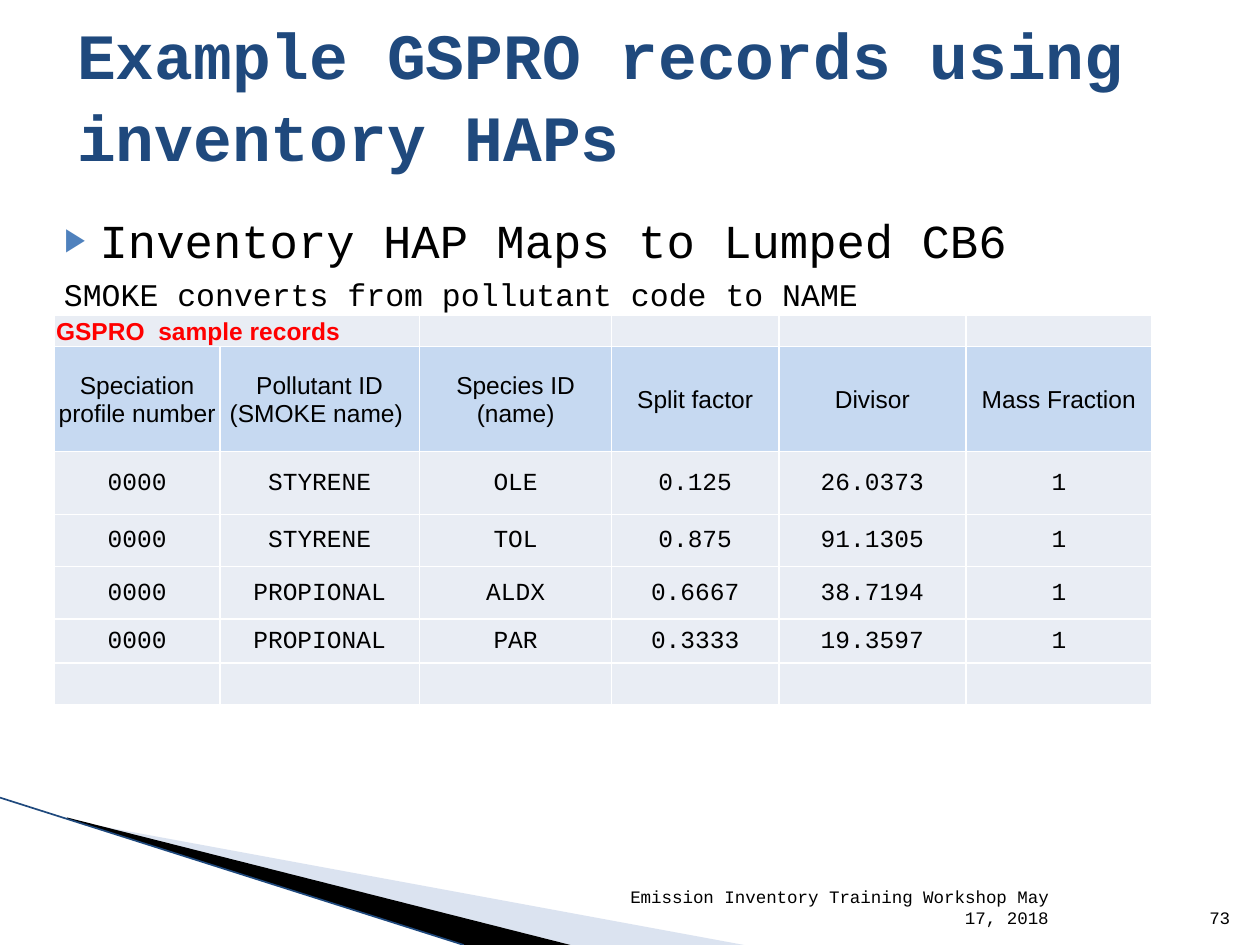
from dataclasses import dataclass

import lxml.etree
import pptx
import pptx.dml.color
import pptx.enum.shapes
import pptx.enum.text
import pptx.oxml.ns
import pptx.util

Cm = pptx.util.Cm
Pt = pptx.util.Pt
qn = pptx.oxml.ns.qn
ALIGN = pptx.enum.text.PP_ALIGN
ANCHOR = pptx.enum.text.MSO_ANCHOR


@dataclass(frozen=True)
class Theme:
    mono: str = "Courier New"
    sans: str = "Arial"
    navy: str = "1F497D"
    black: str = "000000"
    red: str = "FF0000"
    white: str = "FFFFFF"
    bullet: str = "4F81BD"
    wedge: str = "A7B9DB"
    header: str = "C6D9F1"
    row: str = "E9EDF4"
    title_size: float = 36.9
    body_size: int = 27
    note_size: int = 18
    table_size: int = 14
    footer_size: int = 10


THEME = Theme()
COLUMNS = [3.33, 4.03, 3.87, 3.37, 3.77, 3.75]
ROWS = [0.58, 2.12, 1.27, 1.05, 1.05, 0.89, 0.84]
HEADINGS = ["Speciation profile number", "Pollutant ID (SMOKE name) ", "Species ID (name)",
            "Split factor", "Divisor", "Mass Fraction"]
RECORDS = [
    ["0000", "STYRENE", "OLE", "0.125", "26.0373", "1"],
    ["0000", "STYRENE", "TOL", "0.875", "91.1305", "1"],
    ["0000", "PROPIONAL", "ALDX", "0.6667", "38.7194", "1"],
    ["0000", "PROPIONAL", "PAR", "0.3333", "19.3597", "1"],
]


def rgb(color):
    return pptx.dml.color.RGBColor.from_string(color)


def add_xml(parent, tag, **attrs):
    return lxml.etree.SubElement(parent, qn(tag), attrs)


def format_runs(p, size, color=THEME.black, font=THEME.mono, bold=False):
    for r in p.runs:
        r.font.size = Pt(size)
        r.font.name = font
        r.font.bold = bold
        r.font.color.rgb = rgb(color)


def place(sp, left, top, width, height):
    sp.left, sp.top, sp.width, sp.height = Cm(left), Cm(top), Cm(width), Cm(height)


def add_wedge(s, points, color, alpha=None):
    start, *rest = [(Cm(x), Cm(y)) for x, y in points]
    builder = s.shapes.build_freeform(*start, scale=1.0)
    builder.add_line_segments(rest, close=True)
    sp = builder.convert_to_shape()
    sp.shadow.inherit = False
    sp.fill.solid()
    sp.fill.fore_color.rgb = rgb(color)
    sp.line.fill.background()
    if alpha:
        add_xml(sp.fill._xPr.find(".//" + qn("a:srgbClr")), "a:alpha", val=str(alpha * 1000))


def add_edge(s, x1, y1, x2, y2):
    line = s.shapes.add_connector(pptx.enum.shapes.MSO_CONNECTOR.STRAIGHT,
                                  Cm(x1), Cm(y1), Cm(x2), Cm(y2))
    line.line.color.rgb = rgb(THEME.navy)
    line.line.width = Pt(0.95)
    add_xml(line._element.spPr, "a:effectLst")


def set_title(s, text):
    title = s.shapes.title
    place(title, 1.3, 0.28, 22.86, 3.18)
    tf = title.text_frame
    tf.text = text
    tf.word_wrap = True
    tf.auto_size = pptx.enum.text.MSO_AUTO_SIZE.NONE
    tf.vertical_anchor = ANCHOR.MIDDLE
    p = tf.paragraphs[0]
    p.alignment = ALIGN.LEFT
    p.line_spacing = 1.05
    format_runs(p, THEME.title_size, THEME.navy, bold=True)


def add_body(s, bullet, note):
    sp = s.shapes.add_textbox(Cm(0.74), Cm(3.99), Cm(22.86), Cm(12.57))
    tf = sp.text_frame
    tf.word_wrap = True
    tf.margin_top = Cm(0.27)
    p = tf.paragraphs[0]
    p.text = bullet
    pPr = p._p.get_or_add_pPr()
    pPr.set("marL", str(Cm(1.02)))
    pPr.set("indent", str(Cm(-0.71)))
    add_xml(add_xml(pPr, "a:buClr"), "a:srgbClr", val=THEME.bullet)
    add_xml(pPr, "a:buSzPct", val="68000")
    add_xml(pPr, "a:buFont", typeface=THEME.sans)
    add_xml(pPr, "a:buChar", char="▶")
    format_runs(p, THEME.body_size)
    p = tf.add_paragraph()
    p.text = note
    p._p.get_or_add_pPr().set("marL", str(Cm(0.3)))
    p.space_before = Pt(4)
    format_runs(p, THEME.note_size)


def add_footer(s, text, left, width):
    sp = s.shapes.add_textbox(Cm(left), Cm(17.81), Cm(width), Cm(1.02))
    tf = sp.text_frame
    tf.text = text
    tf.word_wrap = True
    tf.vertical_anchor = ANCHOR.BOTTOM
    p = tf.paragraphs[0]
    p.alignment = ALIGN.RIGHT
    format_runs(p, THEME.footer_size)


def style_cell(cell, fill):
    tcPr = cell._tc.get_or_add_tcPr()
    for side in ("a:lnL", "a:lnR", "a:lnT", "a:lnB"):
        border = add_xml(tcPr, side, w=str(Pt(1)))
        add_xml(add_xml(border, "a:solidFill"), "a:srgbClr", val=THEME.white)
    cell.fill.solid()
    cell.fill.fore_color.rgb = rgb(fill)
    cell.vertical_anchor = ANCHOR.MIDDLE
    cell.margin_left = cell.margin_right = cell.margin_top = Cm(0.03)
    cell.margin_bottom = 0


def fill_cell(cell, text, **style):
    p = cell.text_frame.paragraphs[0]
    if text:
        p.text = text
        format_runs(p, THEME.table_size, **style)
    else:
        add_xml(p._p, "a:endParaRPr", sz=str(THEME.table_size * 100))


def add_records(s, caption):
    frame = s.shapes.add_table(len(ROWS), len(COLUMNS), Cm(1.1), Cm(6.36),
                               Cm(sum(COLUMNS)), Cm(sum(ROWS)))
    table = frame.table
    for column, width in zip(table.columns, COLUMNS):
        column.width = Cm(width)
    for row, height in zip(table.rows, ROWS):
        row.height = Cm(height)
    blank = [""] * len(COLUMNS)
    content = [[caption] + blank[1:], HEADINGS, *RECORDS, blank]
    styles = {0: dict(color=THEME.red, font=THEME.sans, bold=True), 1: dict(font=THEME.sans)}
    for i, texts in enumerate(content):
        for j, text in enumerate(texts):
            cell = table.cell(i, j)
            style_cell(cell, THEME.header if i == 1 else THEME.row)
            fill_cell(cell, text, **styles.get(i, {}))
            if i > 0:
                cell.text_frame.paragraphs[0].alignment = ALIGN.CENTER
    table.cell(0, 0).merge(table.cell(0, 1))


def main():
    prs = pptx.Presentation()
    prs.slide_width, prs.slide_height = Cm(25.4), Cm(19.05)
    s = prs.slides.add_slide(prs.slide_layouts[5])
    add_wedge(s, [(1.4, 16.54), (15.0, 19.05), (11.5, 19.05), (1.4, 16.51)], THEME.wedge, 40)
    add_wedge(s, [(1.35, 16.48), (11.5, 19.05), (9.35, 19.05), (1.37, 16.51)], THEME.black)
    add_edge(s, 0, 16.08, 9.35, 19.05)
    set_title(s, "Example GSPRO records using inventory HAPs")
    add_body(s, "Inventory HAP Maps to Lumped CB6", "SMOKE converts from pollutant code to NAME")
    add_footer(s, "Emission Inventory Training Workshop May 17, 2018", 12.17, 9.22)
    add_footer(s, "73", 24.03, 1.02)
    add_records(s, "GSPRO  sample records")
    prs.save("out.pptx")


if __name__ == "__main__":
    main()
